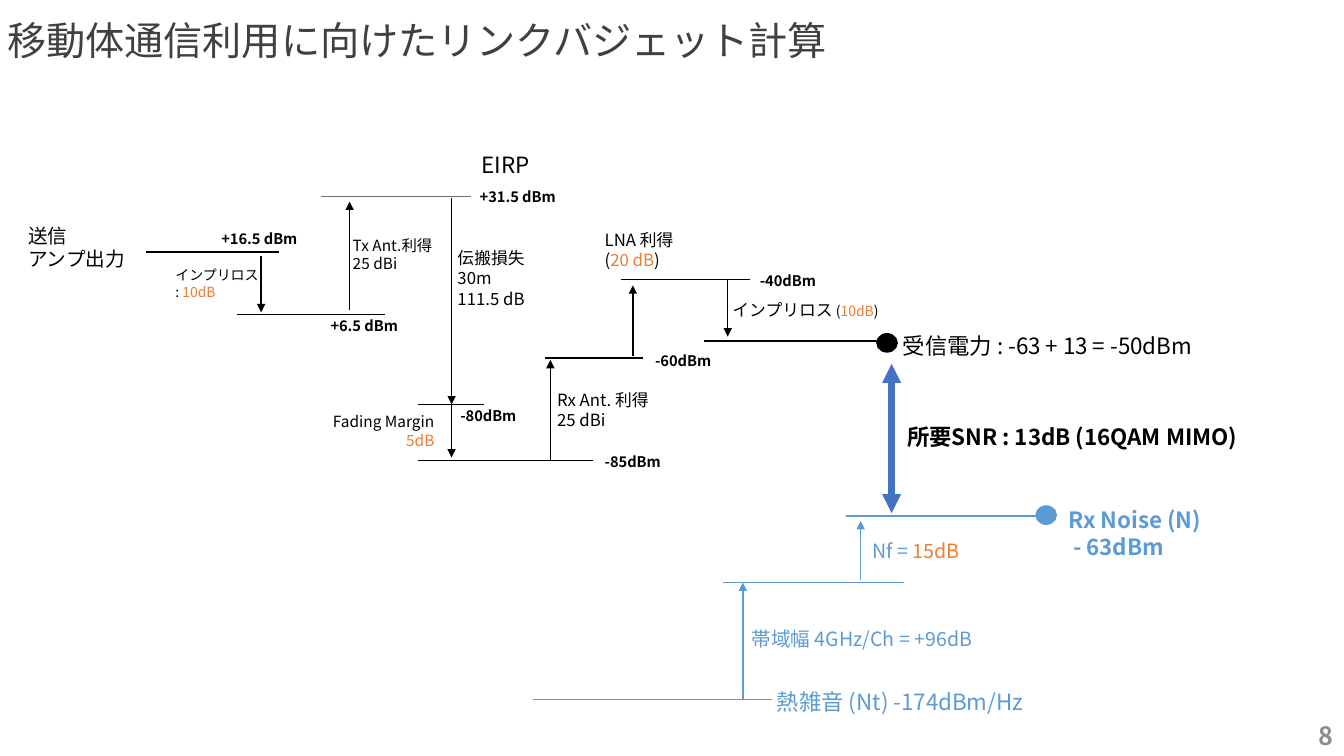
from dataclasses import dataclass
from functools import partial
from typing import NamedTuple, Optional, Union

from lxml.etree import SubElement
from pptx import Presentation
from pptx.dml.color import RGBColor
from pptx.enum.shapes import MSO_CONNECTOR, MSO_SHAPE
from pptx.enum.text import MSO_ANCHOR as Anchor, MSO_AUTO_SIZE as AutoSize, PP_ALIGN as Align
from pptx.oxml.ns import qn
from pptx.slide import Slide
from pptx.util import Cm, Pt

FONT = "Noto Sans CJK JP"
BLACK = RGBColor(0x00, 0x00, 0x00)
TITLE_GRAY = RGBColor(0x40, 0x40, 0x40)
LINE_GRAY = RGBColor(0x76, 0x71, 0x71)
PAGE_GRAY = RGBColor(0x8C, 0x8C, 0x8C)
ORANGE = RGBColor(0xED, 0x7D, 0x31)
NOISE_BLUE = RGBColor(0x5B, 0x9B, 0xD5)
SNR_BLUE = RGBColor(0x44, 0x72, 0xC4)


class Span(NamedTuple):
    text: str
    color: Optional[RGBColor] = None
    size: Optional[float] = None


@dataclass
class Label:
    left: float
    top: float
    width: float
    height: float
    lines: tuple[Union[str, tuple[Span, ...]], ...]
    size: float
    color: RGBColor = BLACK
    bold: bool = False
    align: Align = Align.LEFT
    anchor: Anchor = Anchor.TOP
    auto_size: AutoSize = AutoSize.SHAPE_TO_FIT_TEXT
    side_inset: float = 0.25
    end_inset: float = 0.13
    line_spacing: float = 1.0


@dataclass
class Level:
    left: float
    right: float
    height: float
    color: RGBColor = BLACK


@dataclass
class Arrow:
    x: float
    start: float
    end: float
    color: RGBColor = BLACK
    width: float = 1
    double: bool = False


@dataclass
class Marker:
    left: float
    top: float
    color: RGBColor


Reading = partial(Label, height=0.74, size=10.5, bold=True)

LEVELS = [
    Level(3.68, 7.04, 6.35),
    Level(8.08, 11.86, 4.95, LINE_GRAY),
    Level(5.97, 9.7, 7.92),
    Level(10.54, 14.94, 11.61),
    Level(10.54, 12.19, 10.19),
    Level(13.74, 16.21, 9.02),
    Level(15.65, 18.9, 7.04),
    Level(17.75, 22.5, 8.59),
    Level(13.44, 19.46, 17.63, NOISE_BLUE),
    Level(18.21, 22.78, 14.68, NOISE_BLUE),
    Level(21.31, 26.31, 13, NOISE_BLUE),
]

ARROWS = [
    Arrow(8.81, 7.82, 5.08),
    Arrow(6.58, 6.45, 7.87),
    Arrow(11.38, 4.98, 10.19),
    Arrow(11.38, 10.06, 11.53),
    Arrow(13.87, 11.61, 9.07),
    Arrow(15.95, 8.97, 7.19),
    Arrow(18.34, 7.06, 8.48),
    Arrow(21.69, 14.61, 13.13, NOISE_BLUE),
    Arrow(18.72, 17.63, 14.68, NOISE_BLUE),
    Arrow(22.47, 9.17, 12.93, SNR_BLUE, 4.5, True),
]

MARKERS = [Marker(26.11, 12.75, NOISE_BLUE), Marker(22.1, 8.41, BLACK)]

LABELS = [
    Label(0, 0, 33.87, 2.16, ("移動体通信利用に向けたリンクバジェット計算",), 28, TITLE_GRAY,
          anchor=Anchor.MIDDLE, auto_size=AutoSize.NONE,
          side_inset=0.18, end_inset=0, line_spacing=0.9),
    Label(26.24, 18.03, 7.62, 1.02, ("8",), 18, PAGE_GRAY, True, Align.RIGHT,
          Anchor.MIDDLE, AutoSize.NONE),
    Label(0.46, 5.51, 3.23, 1.45, ("送信", "アンプ出力"), 14),
    Label(11.89, 3.68, 6.17, 0.94, ("EIRP",), 16),
    Label(4.17, 6.58, 2.64, 1.12, ("インプリロス", (Span(": "), Span("10dB", ORANGE))), 10),
    Label(11.28, 6.12, 3.2, 1.8, ("伝搬損失", "30m", "111.5 dB"), 12),
    Label(6.86, 10.26, 4.34, 1.19, ("Fading Margin", (Span("5dB", ORANGE),)), 11,
          align=Align.RIGHT),
    Label(13.79, 9.68, 3.96, 1.27, ("Rx Ant. 利得", "25 dBi"), 12),
    Label(14.99, 5.66, 3.35, 1.27,
          ("LNA 利得", (Span("("), Span("20 dB", ORANGE), Span(")"))), 12),
    Label(18.21, 7.42, 5.51, 0.76,
          ((Span("インプリロス"), Span(" (", size=10), Span("10dB", ORANGE, 10),
            Span(")", size=10)),), 12),
    Label(22.5, 8.23, 8.59, 0.94, ("受信電力 : -63 + 13 = -50dBm",), 16),
    Label(19.33, 17.22, 8.23, 0.94, ("熱雑音 (Nt) -174dBm/Hz",), 16, NOISE_BLUE),
    Label(21.74, 13.46, 3.48, 0.86, ((Span("Nf = "), Span("15dB", ORANGE)),), 14, NOISE_BLUE),
    Label(18.69, 15.67, 6.53, 0.86, ("帯域幅 4GHz/Ch = +96dB",), 14, NOISE_BLUE),
    Label(26.67, 12.62, 5.44, 1.63, ("Rx Noise (N)", " - 63dBm"), 16, NOISE_BLUE, True),
    Label(22.61, 10.54, 9.83, 0.94, ("所要SNR : 13dB (16QAM MIMO)",), 16, bold=True),
    Label(8.64, 5.82, 3.1, 1.19, ("Tx Ant.利得", "25 dBi"), 11),
    Reading(18.9, 6.73, 2.72, lines=("-40dBm",)),
    Reading(16.26, 8.74, 2.72, lines=("-60dBm",)),
    Reading(14.99, 11.28, 2.72, lines=("-85dBm",)),
    Reading(11.35, 10.11, 2.72, lines=("-80dBm",)),
    Reading(11.84, 4.6, 2.72, lines=("+31.5 dBm",)),
    Reading(8.08, 7.85, 2.26, lines=("+6.5 dBm",)),
    Reading(5.33, 5.66, 2.62, lines=("+16.5 dBm",)),
]


def draw_line(slide: Slide, start: tuple[float, float], end: tuple[float, float],
              color: RGBColor, width: float = 1, heads: tuple[str, ...] = ()) -> None:
    connector = slide.shapes.add_connector(
        MSO_CONNECTOR.STRAIGHT, *(Cm(value) for value in (*start, *end)))
    connector.line.color.rgb = color
    connector.line.width = Pt(width)
    properties = connector.element.spPr
    for head in heads:
        SubElement(properties.find(qn("a:ln")), qn(head), type="triangle")
    SubElement(properties, qn("a:effectLst"))


def draw_level(slide: Slide, level: Level) -> None:
    draw_line(slide, (level.left, level.height), (level.right, level.height), level.color)


def draw_arrow(slide: Slide, arrow: Arrow) -> None:
    heads = ("a:headEnd", "a:tailEnd") if arrow.double else ("a:tailEnd",)
    draw_line(slide, (arrow.x, arrow.start), (arrow.x, arrow.end),
              arrow.color, arrow.width, heads)


def draw_marker(slide: Slide, marker: Marker) -> None:
    shape = slide.shapes.add_shape(
        MSO_SHAPE.OVAL, Cm(marker.left), Cm(marker.top), Cm(0.51), Cm(0.46))
    shape.shadow.inherit = False
    shape.fill.solid()
    shape.fill.fore_color.rgb = marker.color
    shape.line.color.rgb = marker.color
    shape.line.width = Pt(1)


def draw_label(slide: Slide, label: Label) -> None:
    box = slide.shapes.add_textbox(
        Cm(label.left), Cm(label.top), Cm(label.width), Cm(label.height))
    frame = box.text_frame
    frame.word_wrap = True
    frame.auto_size = label.auto_size
    frame.vertical_anchor = label.anchor
    frame.margin_left = frame.margin_right = Cm(label.side_inset)
    frame.margin_top = frame.margin_bottom = Cm(label.end_inset)
    for index, line in enumerate(label.lines):
        paragraph = frame.add_paragraph() if index else frame.paragraphs[0]
        paragraph.alignment = label.align
        paragraph.line_spacing = label.line_spacing
        for span in (Span(line),) if isinstance(line, str) else line:
            run = paragraph.add_run()
            run.text = span.text
            run.font.size = Pt(span.size or label.size)
            run.font.bold = label.bold
            run.font.color.rgb = span.color or label.color
            run.font.name = FONT
            SubElement(run._r.get_or_add_rPr(), qn("a:ea"), typeface=FONT)


def main() -> None:
    presentation = Presentation()
    presentation.slide_width = Cm(33.87)
    presentation.slide_height = Cm(19.05)
    slide = presentation.slides.add_slide(presentation.slide_layouts[6])
    for level in LEVELS:
        draw_level(slide, level)
    for arrow in ARROWS:
        draw_arrow(slide, arrow)
    for marker in MARKERS:
        draw_marker(slide, marker)
    for label in LABELS:
        draw_label(slide, label)
    presentation.save("out.pptx")


if __name__ == "__main__":
    main()
